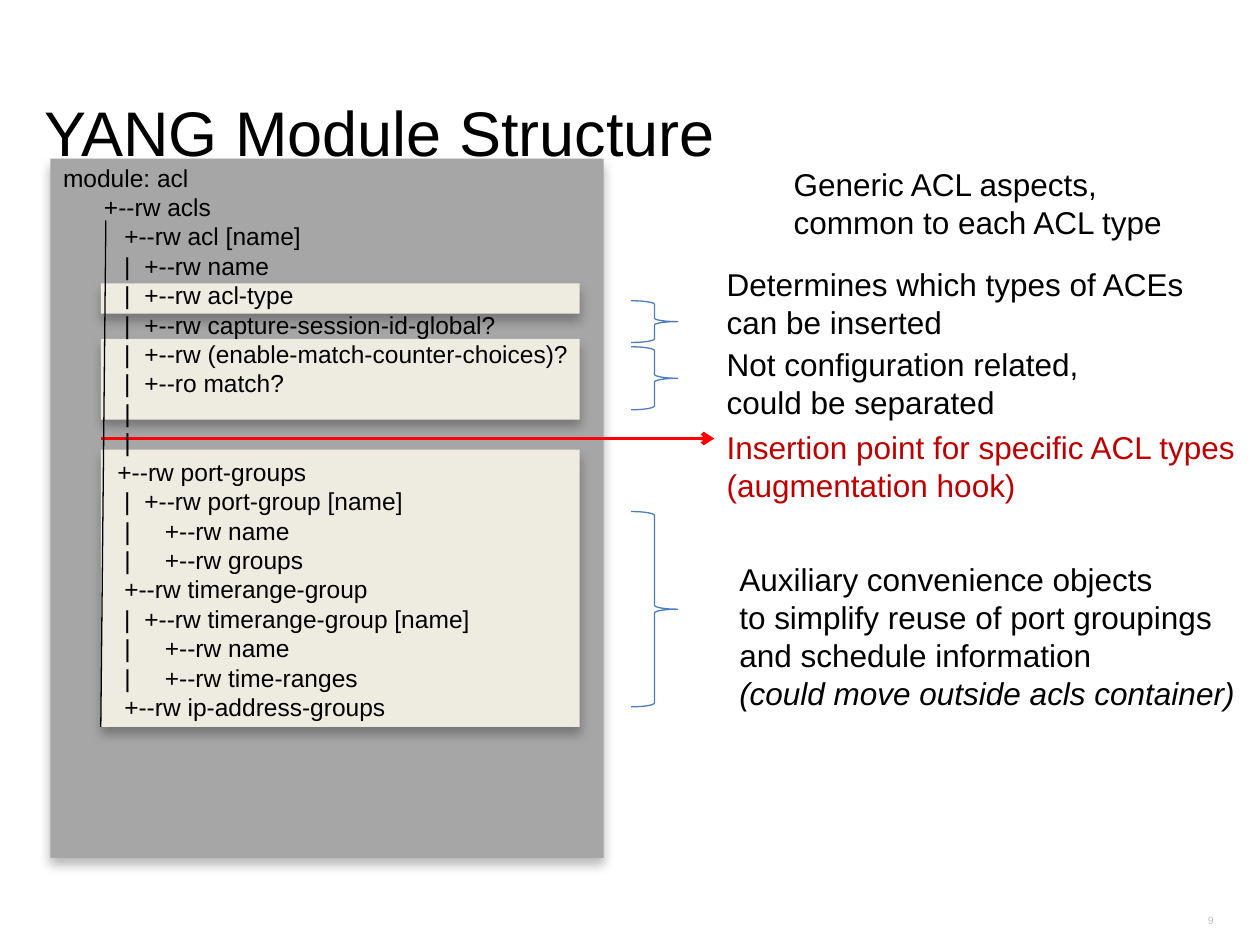
from dataclasses import dataclass
from lxml.etree import SubElement as Sub
from pptx import Presentation as Deck
from pptx.dml.color import RGBColor as Rgb
from pptx.enum.shapes import MSO_CONNECTOR as Link, MSO_SHAPE as Form
from pptx.enum.text import MSO_ANCHOR as Anchor, MSO_AUTO_SIZE as Fit, PP_ALIGN as Align
from pptx.oxml.ns import qn
from pptx.util import Pt

HUES = {"black": "000000", "red": "FF0000", "dark": "C00000", "blue": "4B7EBC",
        "gray": "A6A6A6", "cream": "EEECE1", "pale": "C0C0C0"}
FONT = "Arial"
ROOT, PORT, NODE, LEAF, DEEP = 23.4, 31.1, 35, 46.5, 58.2


@dataclass
class Box:
    left: float
    top: float
    width: float
    height: float

    def place(self) -> tuple:
        return Pt(self.left), Pt(self.top), Pt(self.width), Pt(self.height)


@dataclass
class Panel:
    box: Box
    hue: str


@dataclass
class Note:
    box: Box
    text: str
    hue: str = "black"


@dataclass
class Row:
    text: str
    col: float
    bar: bool = False


PANELS = [Panel(Box(28.8, 90.7, 316.1, 399.6), "gray")] + [
    Panel(Box(57.6, top, 273.6, height), "cream")
    for top, height in ((162, 17.3), (193.7, 46.1), (257, 158.4))]
BRACES = [Box(360.7, top, 26.6, height)
          for top, height in ((171.9, 23.8), (198.2, 36), (292.3, 111.6))]
NOTES = [
    Note(Box(446.4, 90.7, 226.8, 51.1), "Generic ACL aspects,\ncommon to each ACL type"),
    Note(Box(408.2, 147.6, 277.9, 51.1),
         "Determines which types of ACEs\vcan be inserted"),
    Note(Box(408.2, 193.7, 222.5, 51.1),
         "Not configuration related,\vcould be separated"),
    Note(Box(408.2, 241.2, 307.4, 51.1),
         "Insertion point for specific ACL types\n(augmentation hook)", "dark"),
    Note(Box(415.4, 316.1, 300.2, 94.3),
         "Auxiliary convenience objects\vto simplify reuse of port groupings\v"
         "and schedule information\n(could move outside acls container)"),
]
ROWS = [
    Row("module: acl", 0),
    Row("+--rw acls", ROOT),
    Row("+--rw acl [name]", NODE),
    Row("+--rw name", LEAF, True),
    Row("+--rw acl-type", LEAF, True),
    Row("+--rw capture-session-id-global?", LEAF, True),
    Row("+--rw (enable-match-counter-choices)?", LEAF, True),
    Row("+--ro match?", LEAF, True),
    Row("|", NODE),
    Row("|", NODE),
    Row("+--rw port-groups", PORT),
    Row("+--rw port-group [name]", LEAF, True),
    Row("+--rw name", DEEP, True),
    Row("+--rw groups", DEEP, True),
    Row("+--rw timerange-group", NODE),
    Row("+--rw timerange-group [name]", LEAF, True),
    Row("+--rw name", DEEP, True),
    Row("+--rw time-ranges", DEEP, True),
    Row("+--rw ip-address-groups", NODE),
]


def paint(frame, size: float, hue: str, pitch: float) -> None:
    for para in frame.paragraphs:
        para.line_spacing = pitch
        para.space_before = para.space_after = Pt(0)
        for run in para.runs:
            run.font.name = FONT
            run.font.size = Pt(size)
            run.font.color.rgb = Rgb.from_string(HUES[hue])


def draw_panel(slide, panel: Panel) -> None:
    shape = slide.shapes.add_shape(Form.RECTANGLE, *panel.box.place())
    shape.fill.solid()
    shape.fill.fore_color.rgb = Rgb.from_string(HUES[panel.hue])
    shape.line.fill.background()
    shape.shadow.inherit = False
    glow = Sub(shape.element.spPr.find(qn("a:effectLst")), qn("a:outerShdw"),
               blurRad=str(Pt(6)), dist=str(Pt(4)), dir="5400000", rotWithShape="0")
    tint = Sub(glow, qn("a:srgbClr"), val=HUES["black"])
    Sub(tint, qn("a:alpha"), val="27000")


def draw_brace(slide, box: Box) -> None:
    shape = slide.shapes.add_shape(Form.RIGHT_BRACE, *box.place())
    shape.fill.background()
    shape.line.color.rgb = Rgb.from_string(HUES["blue"])
    shape.line.width = Pt(0.75)
    shape.shadow.inherit = False


def draw_line(slide, start: tuple, end: tuple, hue: str, width: float,
              arrow: bool = False) -> None:
    line = slide.shapes.add_connector(Link.STRAIGHT, *map(Pt, start + end))
    line.line.color.rgb = Rgb.from_string(HUES[hue])
    line.line.width = Pt(width)
    if arrow:
        Sub(line.line._get_or_add_ln(), qn("a:tailEnd"), type="arrow")
    Sub(line.element.spPr, qn("a:effectLst"))


def draw_note(slide, note: Note):
    frame = slide.shapes.add_textbox(*note.box.place()).text_frame
    frame.word_wrap = False
    frame.text = note.text
    paint(frame, 18, note.hue, Pt(21.7))
    return frame


def draw_title(slide) -> None:
    title = slide.shapes.title
    title.left, title.top, title.width, title.height = Box(18, 33.8, 676.1, 66.2).place()
    frame = title.text_frame
    frame.text = "YANG Module Structure"
    frame.auto_size = Fit.NONE
    frame.vertical_anchor = Anchor.BOTTOM
    frame.paragraphs[0].alignment = Align.LEFT
    paint(frame, 36, "black", 0.8)
    slide.shapes._spTree.append(title.element)


def draw_tree(slide) -> None:
    body = slide.placeholders[1]
    body.left, body.top, body.width, body.height = Box(28.8, 89.3, 331.9, 406.1).place()
    frame = body.text_frame
    frame.text = "\n".join("|\t" + row.text if row.bar else row.text for row in ROWS)
    frame.auto_size = Fit.NONE
    paint(frame, 14, "black", Pt(16.8))
    for para, row in zip(frame.paragraphs, ROWS):
        props = para._p.get_or_add_pPr()
        props.set("marL", str(Pt(row.col)))
        props.set("indent", str(Pt(NODE - row.col if row.bar else 0)))
        Sub(props, qn("a:buNone"))
    slide.shapes._spTree.append(body.element)


def draw_page(slide) -> None:
    frame = slide.shapes.add_textbox(*Box(680.4, 518.4, 20.2, 13.7).place()).text_frame
    frame.margin_top = frame.margin_bottom = Pt(2.9)
    frame.vertical_anchor = Anchor.BOTTOM
    frame.word_wrap = False
    frame.text = "9"
    frame.paragraphs[0].alignment = Align.RIGHT
    paint(frame, 6, "pale", 1.0)


def main() -> None:
    deck = Deck()
    deck.slide_width, deck.slide_height = Pt(720), Pt(540)
    slide = deck.slides.add_slide(deck.slide_layouts[1])
    draw_page(slide)
    for panel in PANELS:
        draw_panel(slide, panel)
    draw_title(slide)
    for box in BRACES:
        draw_brace(slide, box)
    frames = [draw_note(slide, note) for note in NOTES]
    frames[-1].paragraphs[-1].runs[0].font.italic = True
    draw_line(slide, (57.6, 250.6), (408.2, 250.6), "red", 2.25, True)
    draw_tree(slide)
    draw_line(slide, (60.5, 126), (57.6, 415.4), "black", 0.75)
    deck.save("out.pptx")


if __name__ == "__main__":
    main()
